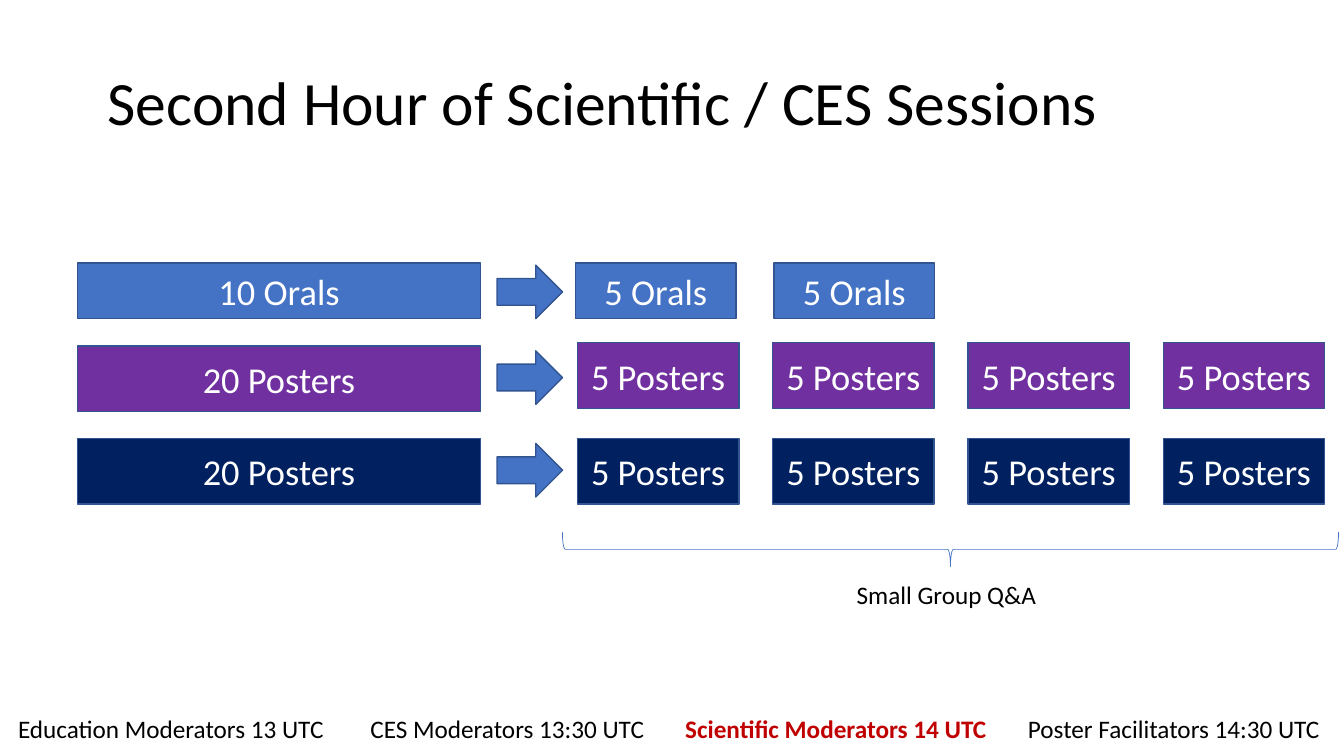
from pptx import Presentation
from pptx.dml.color import RGBColor
from pptx.enum.shapes import MSO_SHAPE
from pptx.enum.text import MSO_ANCHOR, MSO_AUTO_SIZE, PP_ALIGN
from pptx.util import Pt

COLORS = {
    "text": "000000",
    "highlight": "C00000",
    "label": "FFFFFF",
    "blue": "4472C4",
    "outline": "325491",
    "purple": "7030A0",
    "navy": "002060",
}
FONT = "Calibri"

TITLE = "Second Hour of Scientific / CES Sessions"
SESSIONS = [
    {"total": "10 Orals", "group": "5 Orals", "count": 2, "color": "blue",
     "total_top": 187.9, "group_top": 187.9, "arrow_top": 189.4, "height": 39.6,
     "group_left": 411.1, "group_width": 114.8, "pitch": 141.8},
    {"total": "20 Posters", "group": "5 Posters", "count": 4, "color": "purple",
     "total_top": 247, "group_top": 244.8, "arrow_top": 250.6, "height": 46.8,
     "group_left": 412.4, "group_width": 115.4, "pitch": 139.5},
    {"total": "20 Posters", "group": "5 Posters", "count": 4, "color": "navy",
     "total_top": 313.2, "group_top": 313.2, "arrow_top": 316.8, "height": 46.8,
     "group_left": 412.4, "group_width": 115.4, "pitch": 139.5},
]
CAPTION = ("Small Group Q&A", 604.8, 410.4, 144, "text", False)
MODERATOR_TOP = 506.2
MODERATORS = [
    ("Education Moderators 13 UTC", 5.8, MODERATOR_TOP, 238.3, "text", False),
    ("CES Moderators 13:30 UTC", 257.5, MODERATOR_TOP, 211.9, "text", False),
    ("Scientific Moderators 14 UTC", 482.4, MODERATOR_TOP, 232.6, "highlight", True),
    ("Poster Facilitators 14:30 UTC", 727.2, MODERATOR_TOP, 228.2, "text", False),
]
TOTAL_LEFT, TOTAL_WIDTH = 55.4, 288
ARROW_LEFT, ARROW_WIDTH, ARROW_HEIGHT = 355, 46.8, 38.2

presentation = Presentation()
presentation.slide_width = Pt(960)
presentation.slide_height = Pt(540)
slide = presentation.slides.add_slide(presentation.slide_layouts[6])


def rgb(color):
    return RGBColor.from_string(COLORS[color])


def add_run(paragraph, text, size, color, bold=False):
    run = paragraph.add_run()
    run.text = text
    run.font.name = FONT
    run.font.size = Pt(size)
    run.font.bold = bold
    run.font.color.rgb = rgb(color)


def add_outlined(preset, left, top, width, height, fill, line, weight):
    shape = slide.shapes.add_shape(preset, Pt(left), Pt(top), Pt(width), Pt(height))
    shape.shadow.inherit = False
    if fill:
        shape.fill.solid()
        shape.fill.fore_color.rgb = rgb(fill)
    else:
        shape.fill.background()
    shape.line.color.rgb = rgb(line)
    shape.line.width = Pt(weight)
    return shape


def add_block(text, left, top, width, height, color):
    block = add_outlined(MSO_SHAPE.RECTANGLE, left, top, width, height, color, "outline", 1)
    block.text_frame.word_wrap = True
    block.text_frame.vertical_anchor = MSO_ANCHOR.MIDDLE
    paragraph = block.text_frame.paragraphs[0]
    paragraph.alignment = PP_ALIGN.CENTER
    add_run(paragraph, text, 26, "label")


def add_label(text, left, top, width, color, bold):
    label = slide.shapes.add_textbox(Pt(left), Pt(top), Pt(width), Pt(29))
    label.text_frame.word_wrap = False
    label.text_frame.auto_size = MSO_AUTO_SIZE.SHAPE_TO_FIT_TEXT
    add_run(label.text_frame.paragraphs[0], text, 18, color, bold)


title = slide.shapes.add_textbox(Pt(69.8), Pt(23), Pt(828), Pt(104.4))
title.text_frame.word_wrap = True
title.text_frame.vertical_anchor = MSO_ANCHOR.MIDDLE
title.text_frame.paragraphs[0].line_spacing = 0.9
add_run(title.text_frame.paragraphs[0], TITLE, 44, "text")

for session in SESSIONS:
    add_block(session["total"], TOTAL_LEFT, session["total_top"], TOTAL_WIDTH,
              session["height"], session["color"])
    add_outlined(MSO_SHAPE.RIGHT_ARROW, ARROW_LEFT, session["arrow_top"],
                 ARROW_WIDTH, ARROW_HEIGHT, "blue", "outline", 1)
    for column in range(session["count"]):
        add_block(session["group"], session["group_left"] + column * session["pitch"],
                  session["group_top"], session["group_width"], session["height"],
                  session["color"])

brace = add_outlined(MSO_SHAPE.LEFT_BRACE, 666.7, 115.2, 24.5, 554.4, None, "blue", 0.5)
brace.rotation = 270

for label in [CAPTION, *MODERATORS]:
    add_label(*label)

presentation.save("out.pptx")
